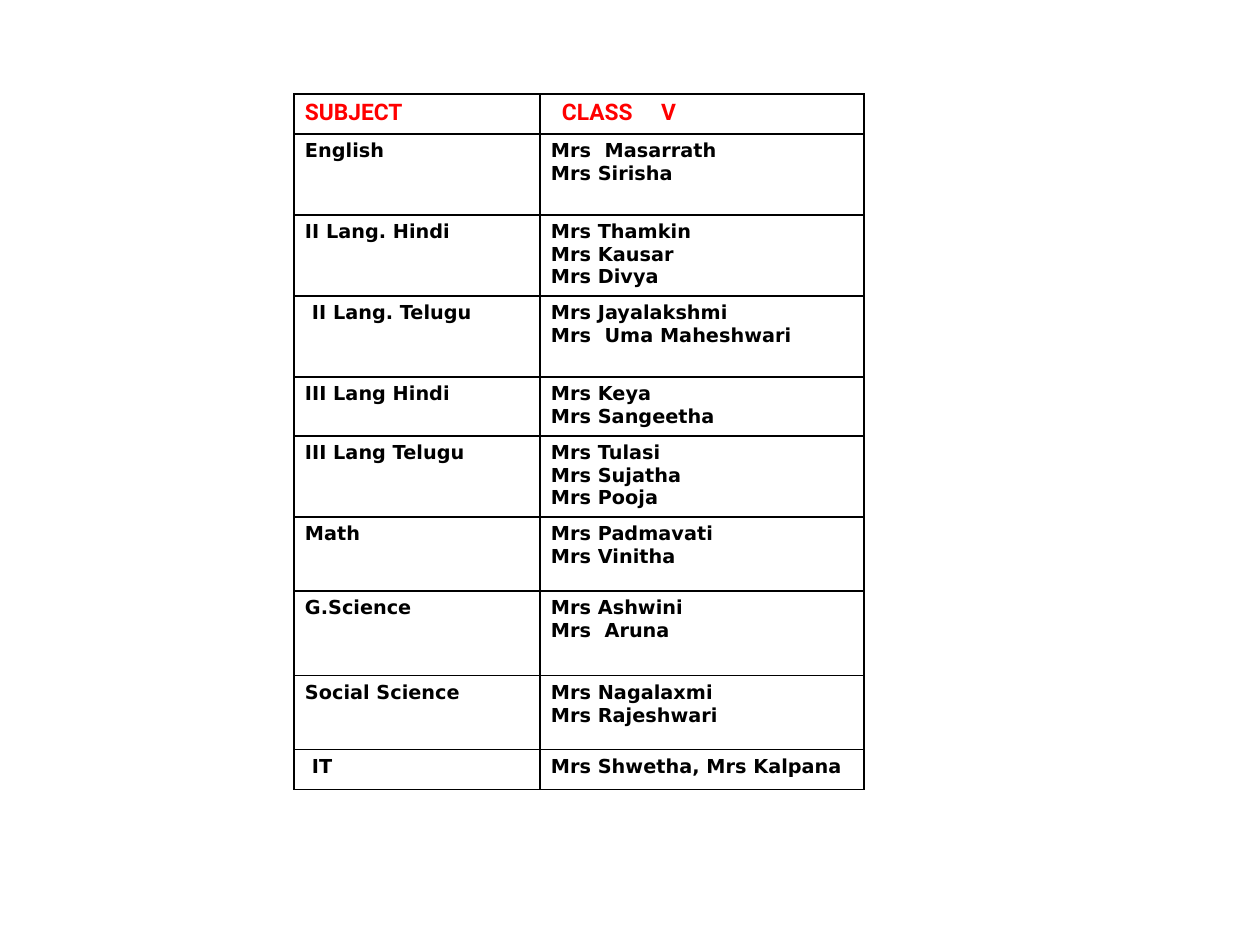
from dataclasses import dataclass

from lxml.etree import SubElement
from pptx import Presentation
from pptx.dml.color import RGBColor
from pptx.oxml.ns import qn
from pptx.util import Pt

EMU_PER_PX = 914400 / 126
COLORS = {"header": "FF0000", "body": "000000", "border": "000000", "cell": "FFFFFF"}
TABLE_LEFT, TABLE_TOP = 294, 94
COLUMN_WIDTHS = (246, 324)
MARGIN_X, MARGIN_Y = 11, 6


@dataclass(frozen=True)
class TextStyle:
    font: str
    size: int
    color: str


@dataclass(frozen=True)
class SubjectRow:
    subject: str
    teachers: tuple[str, ...]
    height: int
    subject_indent: int = 0
    teacher_indent: int = 0
    tab_stop: int = 0


HEADER_STYLE = TextStyle("Roboto", 13, "header")
BODY_STYLE = TextStyle("DejaVu Sans", 11, "body")

ROWS = (
    SubjectRow("SUBJECT", ("CLASS\tV",), 40, teacher_indent=11, tab_stop=99),
    SubjectRow("English", ("Mrs  Masarrath", "Mrs Sirisha"), 81),
    SubjectRow("II Lang. Hindi", ("Mrs Thamkin", "Mrs Kausar", "Mrs Divya"), 81),
    SubjectRow("II Lang. Telugu", ("Mrs Jayalakshmi", "Mrs  Uma Maheshwari"), 81, subject_indent=7),
    SubjectRow("III Lang Hindi", ("Mrs Keya", "Mrs Sangeetha"), 59),
    SubjectRow("III Lang Telugu", ("Mrs Tulasi", "Mrs Sujatha", "Mrs Pooja"), 81),
    SubjectRow("Math", ("Mrs Padmavati", "Mrs Vinitha"), 74),
    SubjectRow("G.Science", ("Mrs Ashwini", "Mrs  Aruna"), 85),
    SubjectRow("Social Science", ("Mrs Nagalaxmi", "Mrs Rajeshwari"), 74),
    SubjectRow("IT", ("Mrs Shwetha, Mrs Kalpana",), 40, subject_indent=7),
)


def px(length: int) -> int:
    return round(length * EMU_PER_PX)


def rgb(name: str) -> RGBColor:
    return RGBColor.from_string(COLORS[name])


def set_borders(cell) -> None:
    """Draw the four sides; border lines must come before the cell fill."""
    properties = cell._tc.get_or_add_tcPr()
    for side in ("lnL", "lnR", "lnT", "lnB"):
        line = SubElement(properties, qn(f"a:{side}"), w=str(Pt(1)))
        fill = SubElement(line, qn("a:solidFill"))
        SubElement(fill, qn("a:srgbClr"), val=COLORS["border"])


def fill_cell(cell, lines: tuple[str, ...], style: TextStyle, indent: int = 0, tab_stop: int = 0) -> None:
    cell.margin_left = cell.margin_right = px(MARGIN_X)
    cell.margin_top = cell.margin_bottom = px(MARGIN_Y)
    set_borders(cell)
    cell.fill.solid()
    cell.fill.fore_color.rgb = rgb("cell")

    cell.text_frame.text = "\n".join(lines)
    for paragraph in cell.text_frame.paragraphs:
        properties = paragraph._p.get_or_add_pPr()
        if indent:
            properties.set("marL", str(px(indent)))
        if tab_stop:
            tabs = SubElement(properties, qn("a:tabLst"))
            SubElement(tabs, qn("a:tab"), pos=str(px(tab_stop)), algn="l")
        paragraph.font.name = style.font
        paragraph.font.size = Pt(style.size)
        paragraph.font.bold = True
        paragraph.font.color.rgb = rgb(style.color)


def add_subject_table(slide) -> None:
    height = sum(row.height for row in ROWS)
    table = slide.shapes.add_table(
        len(ROWS), len(COLUMN_WIDTHS), px(TABLE_LEFT), px(TABLE_TOP),
        px(sum(COLUMN_WIDTHS)), px(height),
    ).table
    table.first_row = table.horz_banding = False
    for column, width in zip(table.columns, COLUMN_WIDTHS):
        column.width = px(width)
    for index, row in enumerate(ROWS):
        style = BODY_STYLE if index else HEADER_STYLE
        table.rows[index].height = px(row.height)
        fill_cell(table.cell(index, 0), (row.subject,), style, row.subject_indent)
        fill_cell(table.cell(index, 1), row.teachers, style, row.teacher_indent, row.tab_stop)


def main() -> None:
    presentation = Presentation()
    presentation.slide_width = px(1260)
    presentation.slide_height = px(945)
    # Subjects and their teachers
    slide = presentation.slides.add_slide(presentation.slide_layouts[6])
    add_subject_table(slide)
    presentation.save("out.pptx")


if __name__ == "__main__":
    main()
